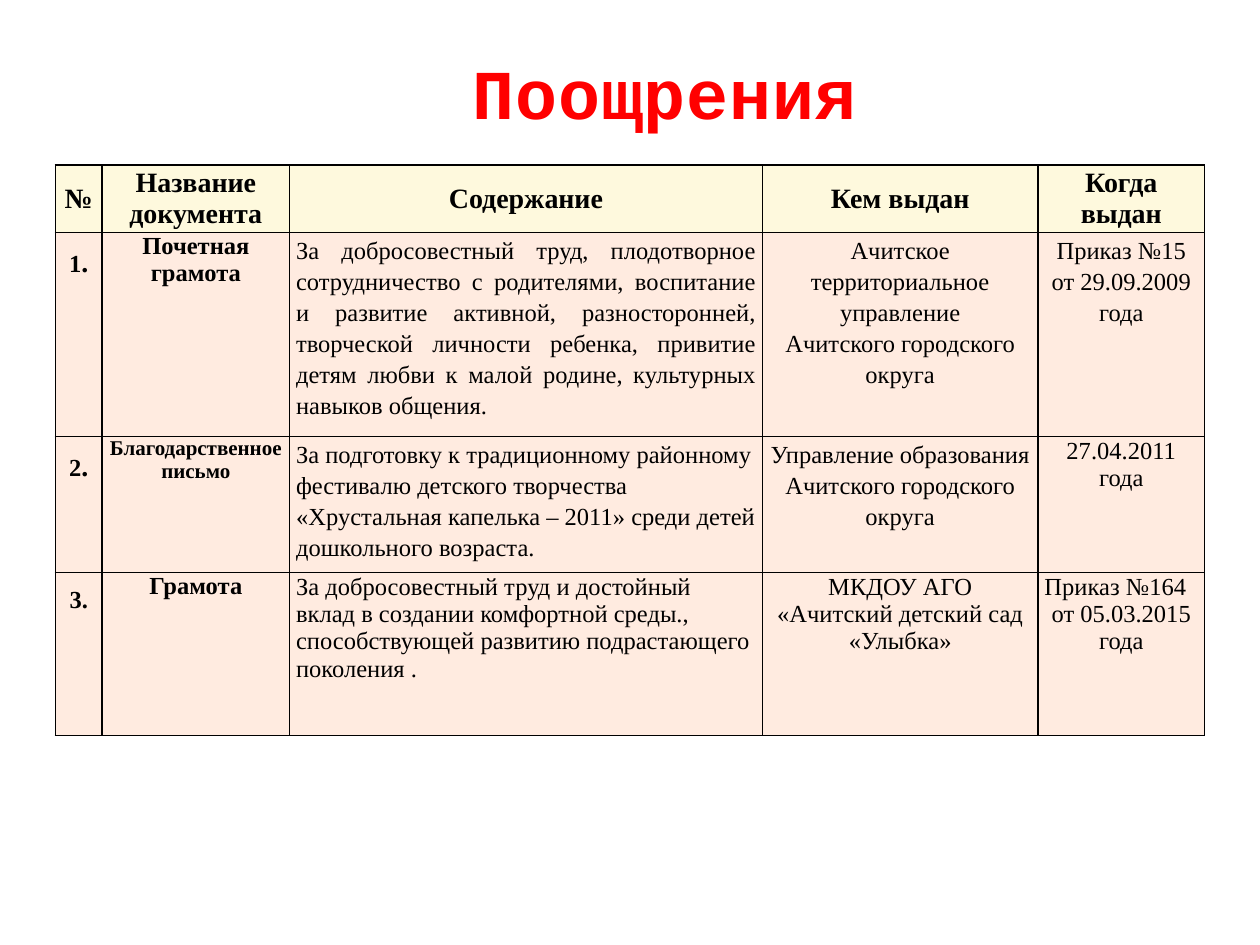
from dataclasses import dataclass
from typing import Optional

from lxml import etree
from pptx import Presentation, util as u
from pptx.dml.color import RGBColor
from pptx.enum import text
from pptx.oxml.ns import qn

SERIF = "Times New Roman"
CENTER, LEFT, JUSTIFY = text.PP_ALIGN.CENTER, text.PP_ALIGN.LEFT, text.PP_ALIGN.JUSTIFY
COLUMNS = [0.37, 1.49, 3.75, 2.19, 1.32]
ROWS = [0.53, 1.62, 1.08, 1.29]
HEADERS = ["№", "Название документа", "Содержание", "Кем выдан", "Когда выдан"]


@dataclass
class Line:
    words: str
    size: float = 14
    bold: bool = False
    align: text.PP_ALIGN = CENTER
    spacing: Optional[float] = None
    dot_size: Optional[float] = None


def number(digit: str, dot_size: float = 16) -> list[Line]:
    return [Line(digit, bold=True, spacing=1.5, dot_size=dot_size)]


AWARDS = [
    [number("1"),
     [Line("Почетная грамота", bold=True)],
     [Line("За добросовестный труд, плодотворное сотрудничество с родителями, "
           "воспитание и развитие активной, разносторонней, творческой личности "
           "ребенка, привитие детям любви к малой родине, культурных навыков "
           "общения.", align=JUSTIFY, spacing=1.15)],
     [Line("Ачитское территориальное управление", spacing=1.15),
      Line("Ачитского городского округа", spacing=1.15)],
     [Line("Приказ №15 от 29.09.2009 года", spacing=1.15)]],
    [number("2"),
     [Line("Благодарственное письмо", size=12, bold=True)],
     [Line("За подготовку к традиционному районному фестивалю детского творчества "
           "«Хрустальная капелька – 2011» среди детей дошкольного возраста.",
           align=LEFT, spacing=1.15)],
     [Line("Управление образования Ачитского городского округа", spacing=1.15)],
     [Line("27.04.2011 года")]],
    [number("3", dot_size=14),
     [Line("Грамота", bold=True)],
     [Line("За добросовестный труд и достойный вклад в создании комфортной среды., "
           "способствующей развитию подрастающего поколения .", align=LEFT)],
     [Line("МКДОУ АГО «Ачитский детский сад «Улыбка»")],
     [Line("Приказ №164", align=LEFT), Line("от 05.03.2015 года")]],
]


def color(hex_value: str) -> RGBColor:
    return RGBColor.from_string(hex_value)


def add_run(p, words: str, *, size: float, bold: bool, font: str = SERIF,
            fill: str = "000000"):
    r = p.add_run()
    r.text = words
    r.font.name, r.font.size, r.font.bold = font, u.Pt(size), bold
    r.font.color.rgb = color(fill)
    return r


def write_lines(tf, lines: list[Line]) -> None:
    for i, line in enumerate(lines):
        p = tf.add_paragraph() if i else tf.paragraphs[0]
        p.alignment = line.align
        if line.spacing:
            p.line_spacing = line.spacing
        add_run(p, line.words, size=line.size, bold=line.bold)
        if line.dot_size:
            add_run(p, ".", size=line.dot_size, bold=line.bold)


def add_borders(cell) -> None:
    """Black one-point lines, placed before the fill as the schema asks."""
    props = cell._tc.get_or_add_tcPr()
    for i, side in enumerate(("lnL", "lnR", "lnT", "lnB")):
        ln = etree.Element(qn(f"a:{side}"), w=str(u.Pt(1)))
        solid = etree.SubElement(ln, qn("a:solidFill"))
        etree.SubElement(solid, qn("a:srgbClr"), val="000000")
        props.insert(i, ln)


def fill_cell(cell, lines: list[Line], *, fill: str, top: float = 0,
              anchor=text.MSO_ANCHOR.TOP) -> None:
    cell.margin_left = cell.margin_right = u.Inches(0.05)
    cell.margin_top, cell.margin_bottom = u.Inches(top), 0
    cell.vertical_anchor = anchor
    cell.fill.solid()
    cell.fill.fore_color.rgb = color(fill)
    add_borders(cell)
    write_lines(cell.text_frame, lines)


def add_title(s) -> None:
    tf = s.shapes.add_textbox(u.Inches(2.01), 0, u.Inches(6.54), u.Inches(1.11)).text_frame
    tf.word_wrap = True
    tf.vertical_anchor = text.MSO_ANCHOR.BOTTOM
    p = tf.paragraphs[0]
    p.alignment = CENTER
    r = add_run(p, "Поощрения", size=40, bold=True, font="Courier New", fill="FF0000")
    r.font._element.set("spc", "50")


def add_awards_table(s) -> None:
    table = s.shapes.add_table(len(ROWS), len(COLUMNS), u.Inches(0.44), u.Inches(1.31),
                               u.Inches(sum(COLUMNS)), u.Inches(sum(ROWS))).table
    for column, width in zip(table.columns, COLUMNS):
        column.width = u.Inches(width)
    for row, height in zip(table.rows, ROWS):
        row.height = u.Inches(height)
    for c, header in enumerate(HEADERS):
        fill_cell(table.cell(0, c), [Line(header, size=16, bold=True)],
                  fill="FEF9DD", anchor=text.MSO_ANCHOR.MIDDLE)
    for r, award in enumerate(AWARDS, 1):
        for c, lines in enumerate(award):
            fill_cell(table.cell(r, c), lines, fill="FFEBE0", top=0.01 if c > 1 else 0)


def main() -> None:
    prs = Presentation()
    prs.slide_width, prs.slide_height = u.Inches(10), u.Inches(7.5)
    s = prs.slides.add_slide(prs.slide_layouts[6])
    add_title(s)
    add_awards_table(s)
    prs.save("out.pptx")


if __name__ == "__main__":
    main()
